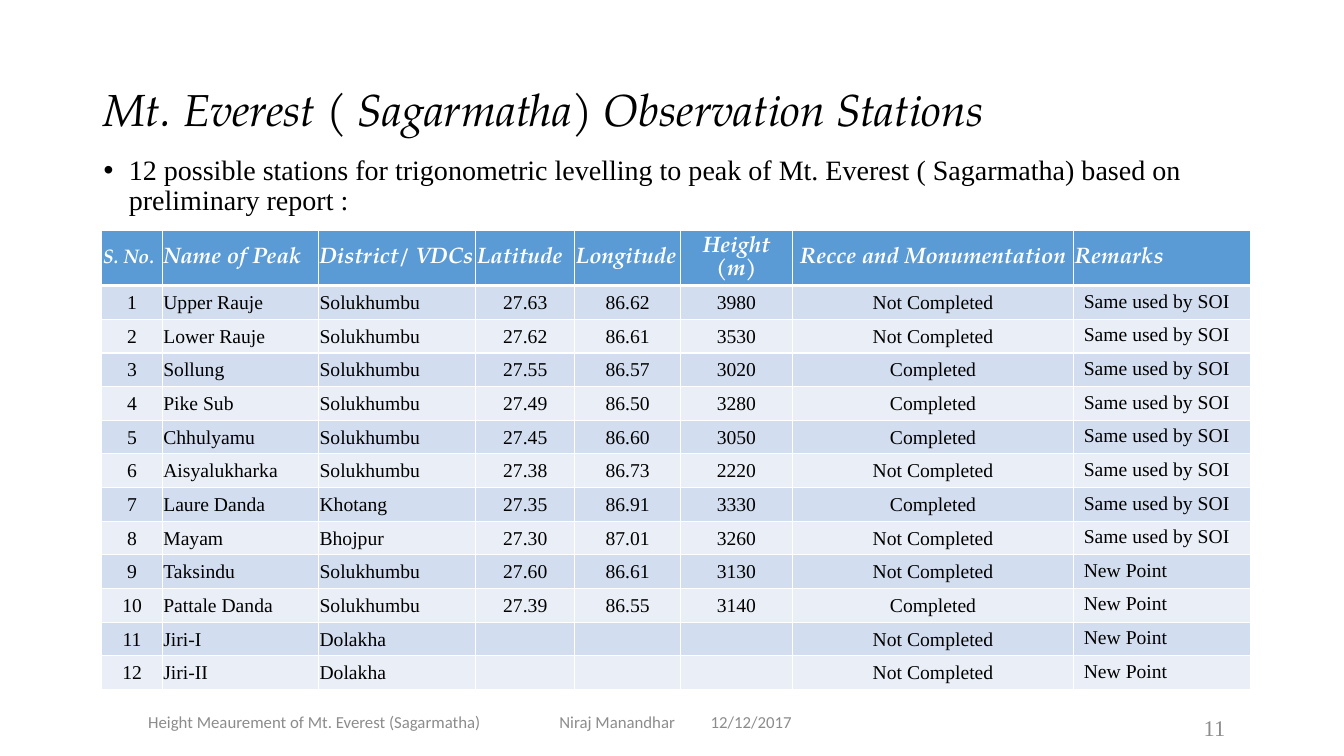
from lxml import etree
from pptx import Presentation
from pptx.dml.color import RGBColor
from pptx.enum.text import MSO_ANCHOR, PP_ALIGN
from pptx.oxml.ns import qn
from pptx.util import Inches, Pt

LEFT, CENTER, RIGHT = PP_ALIGN.LEFT, PP_ALIGN.CENTER, PP_ALIGN.RIGHT
TOP, MIDDLE = MSO_ANCHOR.TOP, MSO_ANCHOR.MIDDLE
SERIF, DISPLAY, SANS = "Times New Roman", "TeX Gyre Pagella", "Calibri"
BLACK, WHITE, GRAY = "000000", "FFFFFF", "8C8C8C"
HEADER_FILL, BANDS = "5B9BD5", ("D2DEEF", "EAEFF7")

COLUMNS = [
    ("S. No.", 0.6, LEFT, CENTER),
    ("Name of Peak", 1.55, LEFT, LEFT),
    ("District/ VDCs", 1.56, LEFT, LEFT),
    ("Latitude", 0.98, LEFT, CENTER),
    ("Longitude", 1.05, LEFT, CENTER),
    ("Height (m)", 1.11, CENTER, CENTER),
    ("Recce and Monumentation", 2.79, CENTER, CENTER),
    ("Remarks", 1.75, LEFT, LEFT),
]
DONE, OPEN = "Completed", "Not Completed"
USED, NEW = "Same used by SOI", "New Point"
STATIONS = [
    ("Upper Rauje", "Solukhumbu", "27.63", "86.62", "3980", OPEN, USED),
    ("Lower Rauje", "Solukhumbu", "27.62", "86.61", "3530", OPEN, USED),
    ("Sollung", "Solukhumbu", "27.55", "86.57", "3020", DONE, USED),
    ("Pike Sub", "Solukhumbu", "27.49", "86.50", "3280", DONE, USED),
    ("Chhulyamu", "Solukhumbu", "27.45", "86.60", "3050", DONE, USED),
    ("Aisyalukharka", "Solukhumbu", "27.38", "86.73", "2220", OPEN, USED),
    ("Laure Danda", "Khotang", "27.35", "86.91", "3330", DONE, USED),
    ("Mayam", "Bhojpur", "27.30", "87.01", "3260", OPEN, USED),
    ("Taksindu", "Solukhumbu", "27.60", "86.61", "3130", OPEN, NEW),
    ("Pattale Danda", "Solukhumbu", "27.39", "86.55", "3140", DONE, NEW),
    ("Jiri-I", "Dolakha", "", "", "", OPEN, NEW),
    ("Jiri-II", "Dolakha", "", "", "", OPEN, NEW),
]


def rgb(color):
    return RGBColor.from_string(color)


def add_run(p, text, size, font, color, bold=False, italic=False):
    r = p.add_run()
    r.text = text
    r.font.size = Pt(size)
    r.font.name = font
    r.font.color.rgb = rgb(color)
    r.font.bold = bold
    r.font.italic = italic


def add_text(s, box, text, size, font, color, align=LEFT, anchor=MIDDLE, italic=False):
    tf = s.shapes.add_textbox(*map(Inches, box)).text_frame
    tf.word_wrap = True
    tf.vertical_anchor = anchor
    p = tf.paragraphs[0]
    p.alignment = align
    add_run(p, text, size, font, color, italic=italic)
    return p


def add_title(s, box):
    p = add_text(s, box, "Mt. Everest ( Sagarmatha) Observation Stations",
                 32, DISPLAY, BLACK, italic=True)
    p.line_spacing = 0.9


def add_intro(s, box):
    p = add_text(s, box, "12 possible stations for trigonometric levelling to peak of "
                 "Mt. Everest ( Sagarmatha) based on preliminary report :",
                 20, SERIF, BLACK, anchor=TOP)
    p.line_spacing = 0.9
    pPr = p._p.get_or_add_pPr()
    pPr.set("marL", str(Inches(0.25)))
    pPr.set("indent", str(Inches(-0.25)))
    etree.SubElement(pPr, qn("a:buFont"), typeface="Arial")
    etree.SubElement(pPr, qn("a:buChar"), char="•")


def set_borders(cell, bottom):
    tcPr = cell._tc.get_or_add_tcPr()
    for side, width in (("L", 1), ("R", 1), ("T", 1), ("B", bottom)):
        ln = etree.SubElement(tcPr, qn("a:ln" + side), w=str(Pt(width)))
        fill = etree.SubElement(ln, qn("a:solidFill"))
        etree.SubElement(fill, qn("a:srgbClr"), val=WHITE)


def fill_cell(cell, text, fill, align, bottom=1, tight=True, **style):
    set_borders(cell, bottom)
    cell.fill.solid()
    cell.fill.fore_color.rgb = rgb(fill)
    if tight:
        cell.vertical_anchor = MIDDLE
        cell.margin_left = cell.margin_right = cell.margin_top = Inches(0.01)
        cell.margin_bottom = 0
    p = cell.text_frame.paragraphs[0]
    p.alignment = align
    if text:
        add_run(p, text, **style)


def add_station_table(s, box):
    table = s.shapes.add_table(len(STATIONS) + 1, len(COLUMNS), *map(Inches, box)).table
    for row in table.rows:
        row.height = Inches(0.3)
    table.rows[0].height = Inches(0.54)
    last = len(COLUMNS) - 1
    for c, (name, width, head_align, align) in enumerate(COLUMNS):
        table.columns[c].width = Inches(width)
        fill_cell(table.cell(0, c), name, HEADER_FILL, head_align, bottom=3,
                  size=16 if c else 14, font=DISPLAY, color=WHITE, bold=True, italic=True)
        for n, station in enumerate(STATIONS, 1):
            text = (str(n), *station)[c]
            fill_cell(table.cell(n, c), text, BANDS[(n - 1) % 2], align,
                      tight=c < last, size=14, font=SERIF, color=BLACK)


def add_footer(s, box):
    left, top, width, height = box
    add_text(s, (left, top, 3.72, height), "Height Meaurement of Mt. Everest (Sagarmatha)",
             12, SANS, GRAY, CENTER)
    add_text(s, (left + 3.58, top, 3.72, height), "Niraj Manandhar \t12/12/2017",
             12, SANS, GRAY, CENTER)
    add_text(s, (left + width - 0.85, top + 0.06, 0.85, height), "11",
             16, SERIF, GRAY, RIGHT)


def main():
    prs = Presentation()
    prs.slide_width, prs.slide_height = Inches(13.33), Inches(7.5)
    s = prs.slides.add_slide(prs.slide_layouts[6])
    add_footer(s, (1.26, 6.96, 10.99, 0.4))
    add_title(s, (0.93, 0.69, 11.47, 0.84))
    add_intro(s, (0.93, 1.5, 11.47, 5.15))
    add_station_table(s, (1.01, 2.29, 11.39, 4.54))
    prs.save("out.pptx")


if __name__ == "__main__":
    main()
